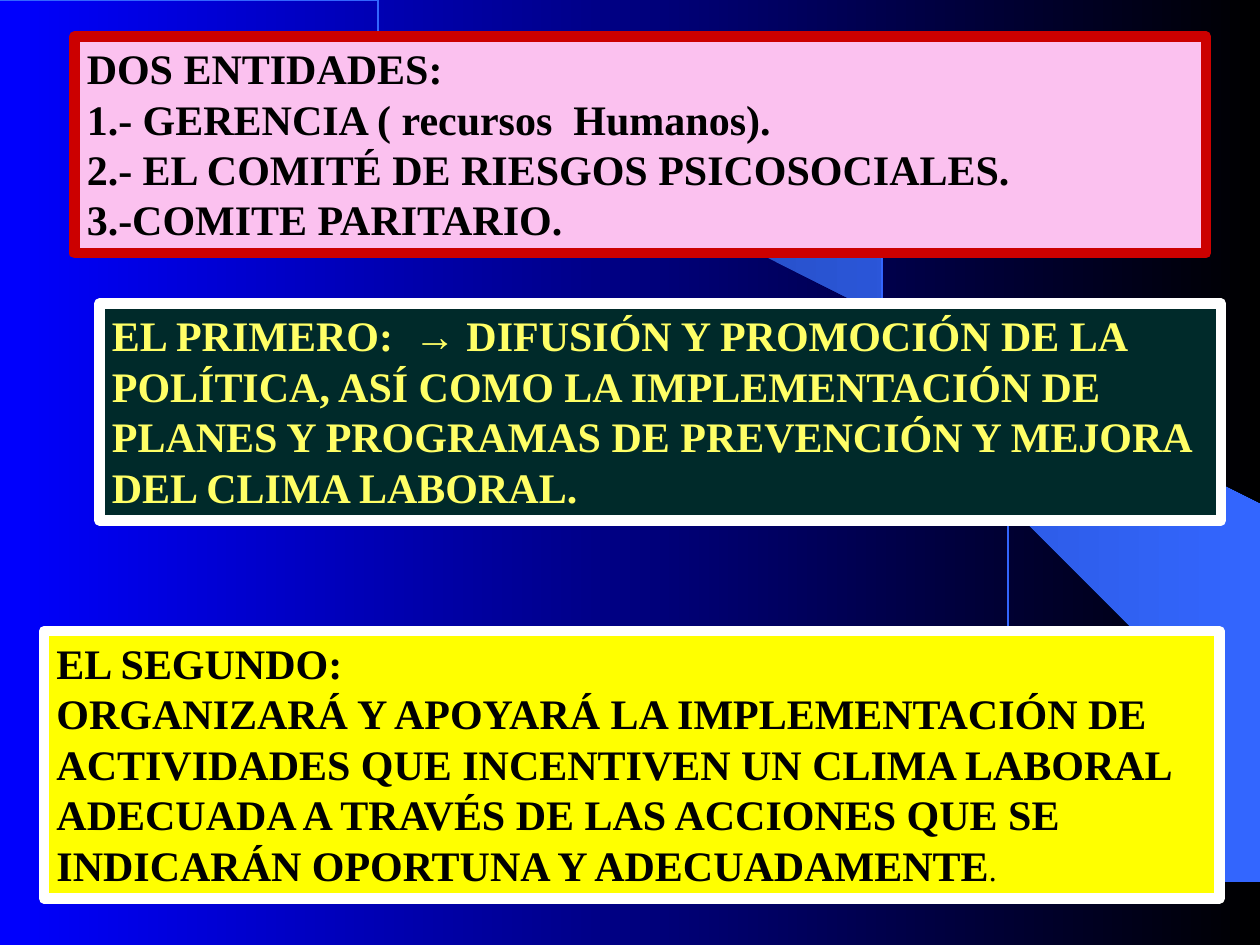
import math

from pptx import Presentation
from pptx import util as u
from pptx.dml.color import RGBColor
from pptx.enum import shapes, text

Inches, Pt = u.Inches, u.Pt
FONT = "Times New Roman"
COLORS = {
    "blue": "0000FF", "black": "000000", "white": "FFFFFF",
    "swoosh_dark": "2851CC", "swoosh": "3366FF",
    "pink": "FBC1EF", "red": "CC0000",
    "teal": "002A2A", "pale_yellow": "FFFF66", "yellow": "FFFF00",
}
# Curved wedge, in inches
SWOOSH = [
    (9.2, 7.48), (9.99, 7.49), (9.99, 4.23), (5.89, 1.73), (6.24, 1.99),
    (6.53, 2.22), (6.85, 2.5), (7.16, 2.8), (7.62, 3.3), (8.03, 3.84),
    (8.32, 4.31), (8.58, 4.79), (8.78, 5.28), (8.93, 5.72), (9.03, 6.09),
    (9.13, 6.56), (9.17, 6.96),
]


def color(name):
    return RGBColor.from_string(COLORS[name])


def fill_gradient(fill, start, end):
    fill.gradient()
    fill.gradient_angle = 0
    for stop, name, position in zip(fill.gradient_stops, (start, end), (0, 1)):
        stop.color.rgb = color(name)
        stop.position = position


def add_outline(s, points, close):
    builder = s.shapes.build_freeform(*points[0], scale=Inches(1))
    builder.add_line_segments(points[1:], close=close)
    sp = builder.convert_to_shape()
    sp.shadow.inherit = False
    return sp


def add_backdrop(s, width, height):
    fill_gradient(s.background.fill, "blue", "black")

    # Wedge on the right
    sp = add_outline(s, SWOOSH, close=True)
    fill_gradient(sp.fill, "swoosh_dark", "swoosh")
    sp.line.fill.background()

    # Quarter ellipse from the top left to the bottom
    steps = 90
    angles = [math.pi / 2 * i / steps for i in range(steps + 1)]
    arc = [(width * math.sin(a), height * (1 - math.cos(a))) for a in angles]
    sp = add_outline(s, arc, close=False)
    sp.fill.background()
    sp.line.color.rgb = color("swoosh")
    sp.line.width = Pt(1)


def add_panel(s, box, fill, border, ink, paragraphs):
    sp = s.shapes.add_shape(shapes.MSO_SHAPE.RECTANGLE, *map(Inches, box))
    sp.shadow.inherit = False
    sp.fill.solid()
    sp.fill.fore_color.rgb = color(fill)
    sp.line.color.rgb = color(border)
    sp.line.width = Pt(6)

    tf = sp.text_frame
    tf.word_wrap = True
    tf.auto_size = text.MSO_AUTO_SIZE.SHAPE_TO_FIT_TEXT
    tf.vertical_anchor = text.MSO_ANCHOR.TOP
    tf.text = "\n".join(paragraphs)
    for p in tf.paragraphs:
        p.alignment = text.PP_ALIGN.LEFT
        for r in p.runs:
            format_run(r, 24, True, ink)
    return sp


def format_run(r, size, bold, ink):
    r.font.name = FONT
    r.font.size = Pt(size)
    r.font.bold = bold
    r.font.color.rgb = color(ink)


def main():
    prs = Presentation()
    prs.slide_width, prs.slide_height = Inches(10), Inches(7.5)
    s = prs.slides.add_slide(prs.slide_layouts[6])
    add_backdrop(s, 9.2, 7.49)

    # The entities
    add_panel(s, (0.59, 0.29, 8.98, 1.72), "pink", "red", "black", [
        "DOS ENTIDADES:",
        "1.- GERENCIA ( recursos  Humanos).",
        "2.- EL COMITÉ DE RIESGOS PSICOSOCIALES.",
        "3.-COMITE PARITARIO.",
    ])

    # Role of the first
    add_panel(s, (0.79, 2.41, 8.9, 1.72), "teal", "white", "pale_yellow", [
        "EL PRIMERO:  → DIFUSIÓN Y PROMOCIÓN DE LA POLÍTICA, ASÍ COMO LA "
        "IMPLEMENTACIÓN DE PLANES Y PROGRAMAS DE PREVENCIÓN Y MEJORA DEL "
        "CLIMA LABORAL.",
    ])

    # Role of the second, closed by a lighter full stop
    sp = add_panel(s, (0.35, 5.01, 9.33, 2.12), "yellow", "white", "black", [
        "EL SEGUNDO:",
        "ORGANIZARÁ Y APOYARÁ LA IMPLEMENTACIÓN DE ACTIVIDADES QUE "
        "INCENTIVEN UN CLIMA LABORAL ADECUADA A TRAVÉS DE LAS ACCIONES "
        "QUE SE  INDICARÁN OPORTUNA Y ADECUADAMENTE",
    ])
    r = sp.text_frame.paragraphs[-1].add_run()
    r.text = "."
    format_run(r, 18, False, "black")

    prs.save("out.pptx")


if __name__ == "__main__":
    main()
